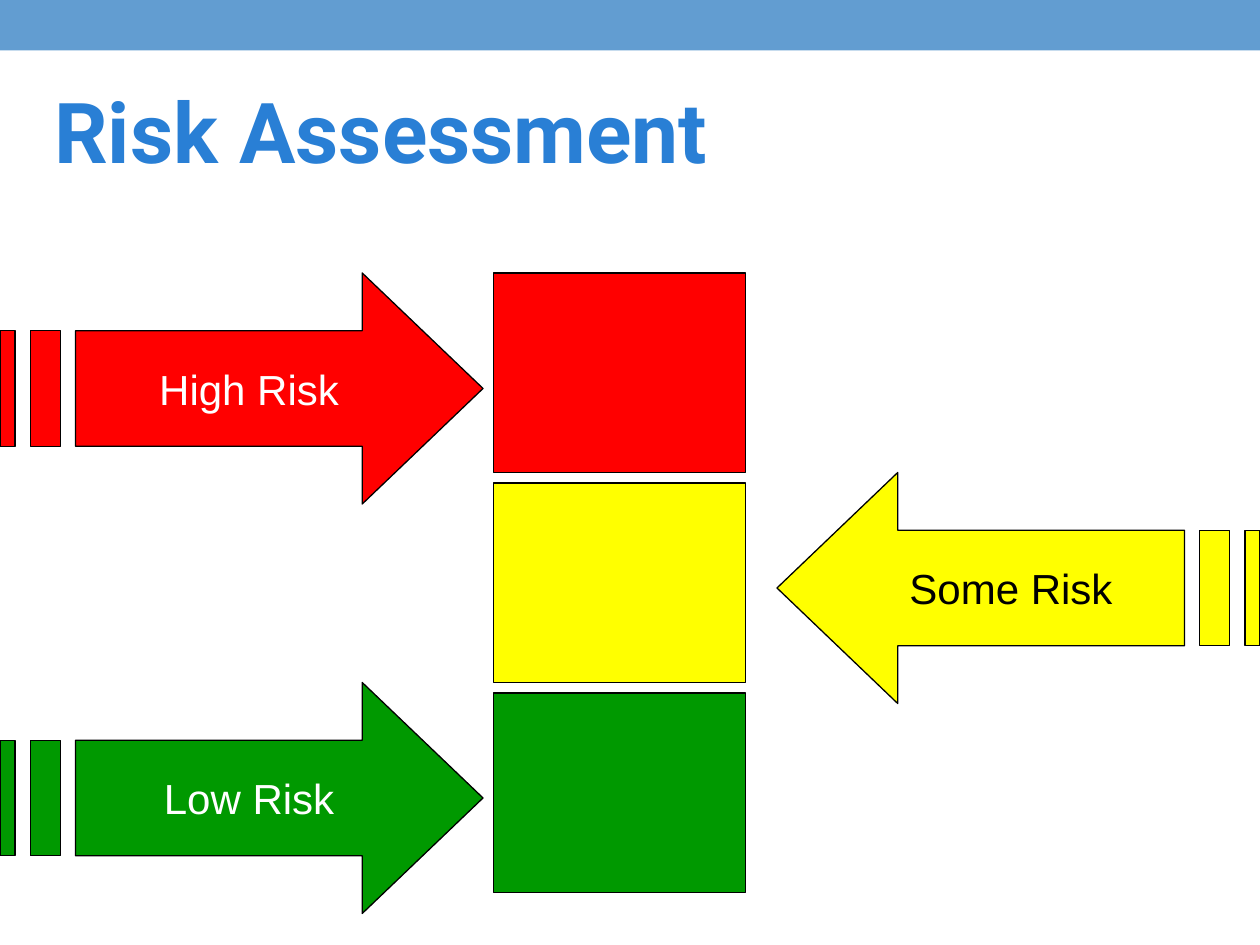
"""Build the Risk Assessment slide with its three levels and arrows."""
from dataclasses import dataclass

from pptx import Presentation
from pptx.dml.color import RGBColor
from pptx.enum.shapes import MSO_SHAPE
from pptx.enum.text import MSO_ANCHOR, MSO_AUTO_SIZE, PP_ALIGN
from pptx.shapes.autoshape import Shape
from pptx.slide import Slide
from pptx.text.text import TextFrame
from pptx.util import Pt


@dataclass(frozen=True)
class Theme:
    banner: str = "629DD1"
    title: str = "297FD5"
    outline: str = "000000"
    title_font: str = "Roboto"
    label_font: str = "Arial"
    title_size: float = 48
    label_size: float = 24
    line_width: float = 0.75


@dataclass(frozen=True)
class Level:
    label: str
    fill: str
    text: str
    arrow_top: float
    from_right: bool = False


THEME = Theme()
SLIDE_W, SLIDE_H = 720, 540
BOX_LEFT, BOX_TOP, BOX_W, BOX_H, BOX_STEP = 282, 156, 144, 114, 120
ARROW_W, ARROW_H = 276, 132
UNIT_X, UNIT_Y = ARROW_W / 32, ARROW_H / 4
INSET = 7.2
CONTOURS = (
    ((24, 0), (24, 1), (5, 1), (5, 3), (24, 3), (24, 4), (32, 2)),
    ((2, 1), (2, 3), (4, 3), (4, 1)),
    ((0, 1), (0, 3), (1, 3), (1, 1)),
)
LEVELS = (
    Level("High Risk", "FF0000", "FFFFFF", 156),
    Level("Some Risk", "FFFF00", "000000", 270, from_right=True),
    Level("Low Risk", "009900", "FFFFFF", 390),
)


def paint(sp: Shape, fill: str, outlined: bool = True) -> None:
    sp.shadow.inherit = False
    sp.fill.solid()
    sp.fill.fore_color.rgb = RGBColor.from_string(fill)
    if outlined:
        sp.line.color.rgb = RGBColor.from_string(THEME.outline)
        sp.line.width = Pt(THEME.line_width)
    else:
        sp.line.fill.background()


def add_rect(s: Slide, left: float, top: float, width: float, height: float,
             fill: str, outlined: bool = True) -> None:
    sp = s.shapes.add_shape(MSO_SHAPE.RECTANGLE, Pt(left), Pt(top), Pt(width), Pt(height))
    paint(sp, fill, outlined)


def write(tf: TextFrame, text: str, font: str, size: float, color: str,
          align: PP_ALIGN, bold: bool = False) -> None:
    p = tf.paragraphs[0]
    p.alignment = align
    r = p.add_run()
    r.text = text
    r.font.name = font
    r.font.size = Pt(size)
    r.font.bold = bold
    r.font.color.rgb = RGBColor.from_string(color)


def add_title(s: Slide, text: str) -> None:
    tf = s.shapes.add_textbox(Pt(24), Pt(42), Pt(672), Pt(65.5)).text_frame
    tf.word_wrap = True
    tf.auto_size = MSO_AUTO_SIZE.SHAPE_TO_FIT_TEXT
    write(tf, text, THEME.title_font, THEME.title_size, THEME.title, PP_ALIGN.LEFT, bold=True)


def add_arrow(s: Slide, level: Level) -> None:
    def place(point: tuple[int, int]) -> tuple[int, int]:
        x = point[0] * UNIT_X
        if level.from_right:
            x = SLIDE_W - x
        return Pt(x), Pt(level.arrow_top + point[1] * UNIT_Y)

    outlines = [[place(point) for point in contour] for contour in CONTOURS]
    builder = s.shapes.build_freeform(*outlines[0][0])
    builder.add_line_segments(outlines[0][1:], close=True)
    for outline in outlines[1:]:
        builder.move_to(*outline[0])
        builder.add_line_segments(outline[1:], close=True)
    sp = builder.convert_to_shape()
    paint(sp, level.fill)

    tf = sp.text_frame
    tf.word_wrap = False
    tf.vertical_anchor = MSO_ANCHOR.MIDDLE
    tail, head = Pt(5 * UNIT_X + INSET), Pt(4 * UNIT_X + INSET)
    tf.margin_left, tf.margin_right = (head, tail) if level.from_right else (tail, head)
    write(tf, level.label, THEME.label_font, THEME.label_size, level.text, PP_ALIGN.CENTER)


def main() -> None:
    prs = Presentation()
    prs.slide_width, prs.slide_height = Pt(SLIDE_W), Pt(SLIDE_H)
    s = prs.slides.add_slide(prs.slide_layouts[6])
    add_rect(s, 0, 0, SLIDE_W, 28.8, THEME.banner, outlined=False)
    add_title(s, "Risk Assessment")
    for i, level in reversed(list(enumerate(LEVELS))):
        add_rect(s, BOX_LEFT, BOX_TOP + i * BOX_STEP, BOX_W, BOX_H, level.fill)
        add_arrow(s, level)
    prs.save("out.pptx")


if __name__ == "__main__":
    main()
